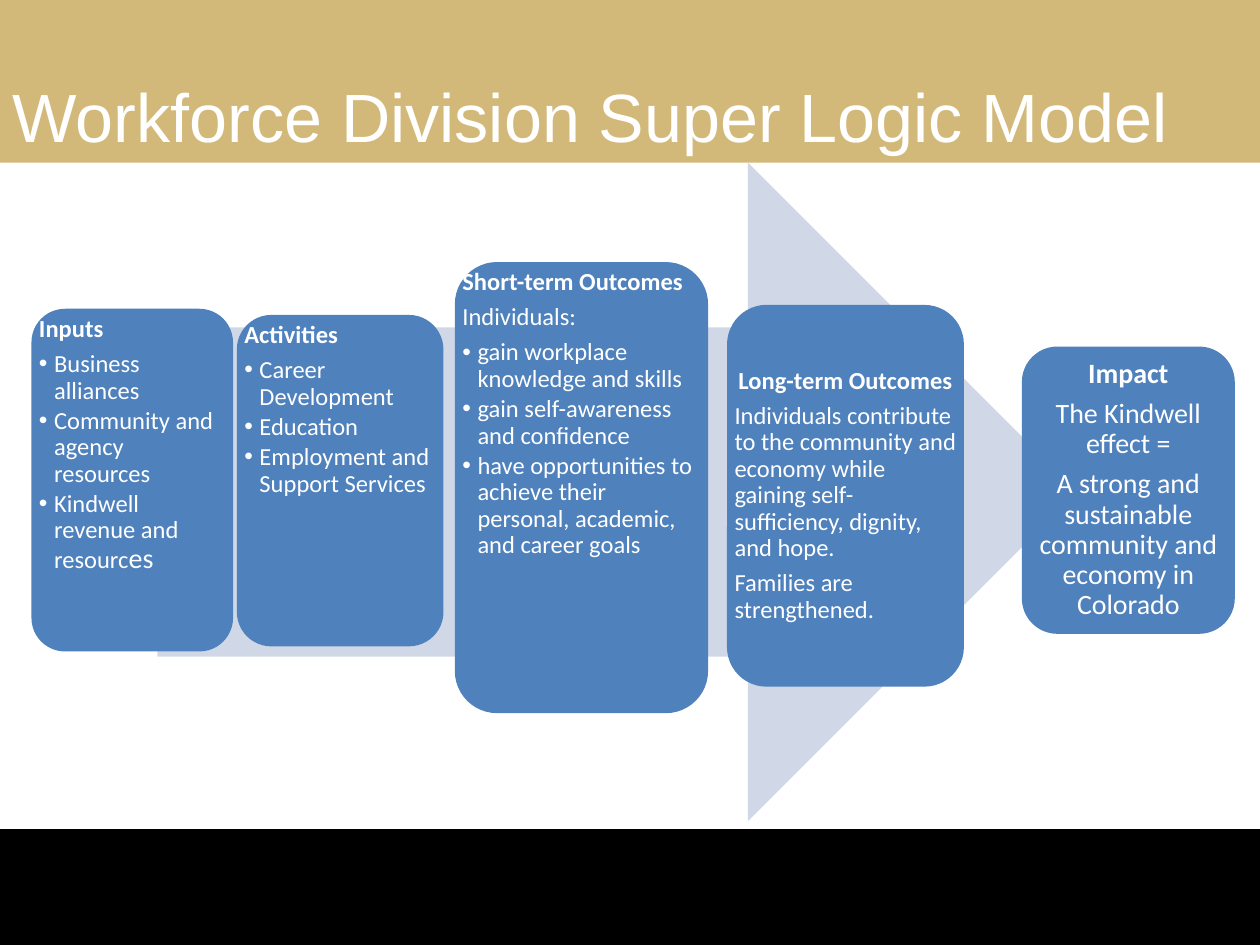
"""Build the Workforce Division Super Logic Model slide."""
from dataclasses import dataclass
from typing import NamedTuple

from lxml.etree import SubElement
from pptx import Presentation
from pptx.dml.color import RGBColor
from pptx.enum.shapes import MSO_SHAPE as Preset
from pptx.enum.text import MSO_ANCHOR as Anchor, MSO_AUTO_SIZE as AutoSize, PP_ALIGN as Align
from pptx.oxml.ns import qn
from pptx.util import Inches, Pt

COLORS = {"band": "D3B979", "footer": "000000", "arrow": "D0D8E8",
          "stage": "4F81BD", "text": "FFFFFF"}
WIDTH, HEIGHT = Inches(10), Inches(7.5)


class Area(NamedTuple):
    """Left, top, width and height in percent of the slide."""
    left: float
    top: float
    width: float
    height: float

    def box(self) -> tuple[int, int, int, int]:
        return (round(WIDTH * self.left / 100), round(HEIGHT * self.top / 100),
                round(WIDTH * self.width / 100), round(HEIGHT * self.height / 100))


@dataclass(frozen=True)
class Line:
    """One paragraph of a stage, with an optional larger ending."""
    text: str
    bullet: bool = False
    centered: bool = False
    large_tail: str = ""


@dataclass(frozen=True)
class Stage:
    """One rounded box of the logic model; its first line is the heading."""
    area: Area
    lines: tuple[Line, ...]
    anchor: Anchor = Anchor.TOP
    size: int = 14
    inset: float = 0.06


def bullets(*texts: str) -> tuple[Line, ...]:
    return tuple(Line(text, bullet=True) for text in texts)


def centered(*texts: str) -> tuple[Line, ...]:
    return tuple(Line(text, centered=True) for text in texts)


STAGES = (
    Stage(Area(2.5, 32.67, 16, 36.27),
          (Line("Inputs"),
           *bullets("Business alliances", "Community and agency resources"),
           Line("Kindwell revenue and resourc", bullet=True, large_tail="es"))),
    Stage(Area(18.8, 33.33, 16.4, 35.07),
          (Line("Activities"),
           *bullets("Career Development", "Education", "Employment and Support Services"))),
    Stage(Area(36.1, 27.73, 20.1, 47.73),
          (Line("Short-term Outcomes"), Line("Individuals:"),
           *bullets("gain workplace knowledge and skills",
                    "gain self-awareness and confidence",
                    "have opportunities to achieve their personal, academic, and career goals"))),
    Stage(Area(57.7, 32.27, 18.8, 40.4),
          (*centered("Long-term Outcomes"),
           Line("Individuals contribute to the community and economy while gaining "
                "self-sufficiency, dignity, and hope."),
           Line("Families are strengthened.")), Anchor.MIDDLE),
    Stage(Area(81.1, 36.67, 16.9, 30.4),
          centered("Impact", "The Kindwell effect =",
                   "A strong and sustainable community and economy in Colorado"),
          Anchor.MIDDLE, 16, 0.07),
)


def color(name: str) -> RGBColor:
    return RGBColor.from_string(COLORS[name])


def add_block(slide, preset: Preset, area: Area, fill: str) -> None:
    shape = slide.shapes.add_shape(preset, *area.box())
    shape.shadow.inherit = False
    shape.fill.solid()
    shape.fill.fore_color.rgb = color(fill)
    shape.line.fill.background()


def add_bullet(paragraph) -> None:
    properties = paragraph._p.get_or_add_pPr()
    properties.set("marL", str(Inches(0.12)))
    properties.set("indent", str(-Inches(0.12)))
    SubElement(properties, qn("a:buFont"), typeface="Arial")
    SubElement(properties, qn("a:buChar"), char="•")


def format_font(font, name: str, size: int, bold: bool = False) -> None:
    font.name, font.size, font.bold = name, Pt(size), bold
    font.color.rgb = color("text")


def write_line(paragraph, line: Line, size: int, bold: bool) -> None:
    paragraph.text = line.text
    if line.bullet:
        add_bullet(paragraph)
    paragraph.alignment = Align.CENTER if line.centered else Align.LEFT
    paragraph.line_spacing = 0.9
    paragraph.space_after = Pt(size * (0.15 if line.bullet else 0.35))
    format_font(paragraph.runs[0].font, "Calibri", size, bold)
    if line.large_tail:
        run = paragraph.add_run()
        run.text = line.large_tail
        format_font(run.font, "Calibri", size + 2, bold)


def add_stage(slide, stage: Stage) -> None:
    add_block(slide, Preset.ROUNDED_RECTANGLE, stage.area, "stage")
    frame = slide.shapes.add_textbox(*stage.area.box()).text_frame
    frame.word_wrap = True
    frame.vertical_anchor = stage.anchor
    frame.margin_left = frame.margin_right = Inches(stage.inset)
    frame.margin_top = frame.margin_bottom = Inches(stage.inset)
    for index, line in enumerate(stage.lines):
        paragraph = frame.add_paragraph() if index else frame.paragraphs[0]
        write_line(paragraph, line, stage.size, bold=index == 0)


def format_title(title, area: Area, text: str) -> None:
    title.left, title.top, title.width, title.height = area.box()
    title.fill.solid()
    title.fill.fore_color.rgb = color("band")
    frame = title.text_frame
    frame.text = text
    frame.auto_size = AutoSize.NONE
    frame.vertical_anchor = Anchor.BOTTOM
    frame.paragraphs[0].alignment = Align.LEFT
    format_font(frame.paragraphs[0].runs[0].font, "Arial", 39)


def main() -> None:
    presentation = Presentation()
    presentation.slide_width, presentation.slide_height = WIDTH, HEIGHT
    slide = presentation.slides.add_slide(presentation.slide_layouts.get_by_name("Title Only"))
    format_title(slide.shapes.title, Area(0, -0.53, 100, 17.73),
                 "Workforce Division Super Logic Model")
    add_block(slide, Preset.RECTANGLE, Area(0, 87.73, 100, 12.27), "footer")
    add_block(slide, Preset.RIGHT_ARROW, Area(12.5, 17.2, 73, 69.73), "arrow")
    for stage in STAGES:
        add_stage(slide, stage)
    presentation.save("out.pptx")


if __name__ == "__main__":
    main()
